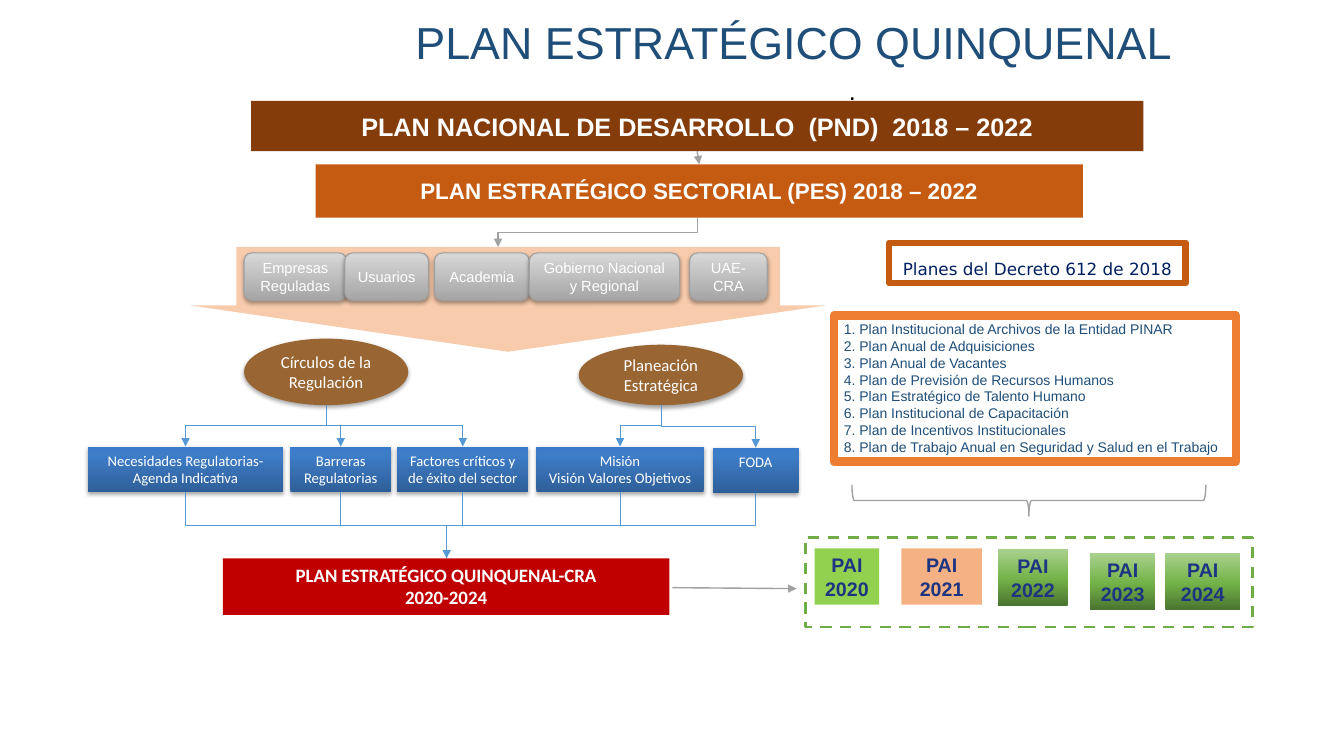
"""Build the slide of the five-year strategic plan and the plans that feed it."""
from lxml.etree import SubElement as Sub
from pptx import Presentation
from pptx.dml.color import RGBColor
from pptx.enum.dml import MSO_LINE as Dash
from pptx.enum.shapes import MSO_CONNECTOR as Cxn, MSO_SHAPE as Kind
from pptx.enum.text import MSO_ANCHOR as Anchor, MSO_AUTO_SIZE as Fit, PP_ALIGN as Align
from pptx.oxml.ns import qn
from pptx.util import Inches, Pt

CELL = Inches(0.1)
hue = RGBColor.from_string
GRAY, SKY, WHITE = "A1A1A1", "5698D3", "FFFFFF"
STEEL = ((0, "A5A5A5"), (100, "D8D8D8"))
BLUE = ((0, "2F5F99"), (80, "3D7CC7"), (100, "3A7CCB"))
GREEN = ((0, "4B7430"), (48, "74B349"), (100, "A9D18E"))


def put(shape, text="", fill=None, line=None, thick=1, size=12, font="Arial", ink=WHITE,
        bold=False, align=Align.CENTER, anchor=Anchor.MIDDLE, shade=False):
    """Paint a shape and write its text, one paragraph per line."""
    shape.shadow.inherit = False
    if fill is None:
        shape.fill.background()
    elif isinstance(fill, str):
        shape.fill.solid()
        shape.fill.fore_color.rgb = hue(fill)
    else:
        shape.fill.gradient()
        shape.fill.gradient_angle = 90
        stops = shape._element.spPr.find(".//" + qn("a:gsLst"))
        stops.clear()
        for pos, tone in fill:
            stop = Sub(stops, qn("a:gs"), pos=str(pos * 1000))
            Sub(stop, qn("a:srgbClr"), val=tone)
    if line:
        shape.line.color.rgb = hue(line)
        shape.line.width = Pt(thick)
    else:
        shape.line.fill.background()
    if shade:
        glow = shape._element.spPr.find(qn("a:effectLst"))
        drop = Sub(glow, qn("a:outerShdw"), blurRad=str(Pt(3.1)), dist=str(Pt(1.8)),
                   dir="5400000", rotWithShape="0")
        tone = Sub(drop, qn("a:srgbClr"), val="000000")
        Sub(tone, qn("a:alpha"), val="35000")
    if text:
        frame = shape.text_frame
        frame.text = text
        frame.word_wrap = True
        frame.auto_size = Fit.NONE
        frame.vertical_anchor = anchor
        for para in frame.paragraphs:
            props = para._p.get_or_add_pPr()
            props.set("marL", "0")
            props.set("indent", "0")
            Sub(props, qn("a:buNone"))
            para.alignment = align
            para.space_before = Pt(0)
            para.font.size = Pt(size)
            para.font.name = font
            para.font.bold = bold
            para.font.color.rgb = hue(ink)
    return shape


def wire(x1, y1, x2, y2, tone, thick=1, head=True, bent=True):
    """Draw a line; a bent one leaves and arrives vertically."""
    ends = [round(n * CELL) for n in (x1, y1, x2, y2)]
    link = shapes.add_connector(Cxn.ELBOW if bent else Cxn.STRAIGHT, *ends)
    if bent:
        wide, high = abs(ends[2] - ends[0]), ends[3] - ends[1]
        link.left = (ends[0] + ends[2] - high) // 2
        link.top = (ends[1] + ends[3] - wide) // 2
        link.width, link.height = high, wide
        frame = link._element.spPr.find(qn("a:xfrm"))
        frame.attrib.pop("flipH", None)
        frame.set("rot", "5400000" if x2 < x1 else "16200000")
        if x2 >= x1:
            frame.set("flipH", "1")
    link.line.color.rgb = hue(tone)
    link.line.width = Pt(thick)
    if head:
        Sub(link.line._get_or_add_ln(), qn("a:tailEnd"), type="triangle")
    Sub(link._element.spPr, qn("a:effectLst"))
    return link


deck = Presentation()
deck.slide_width, deck.slide_height = Inches(13.33), Inches(7.5)
slide = deck.slides.add_slide(deck.slide_layouts[1])
shapes = slide.shapes
title, plans = slide.placeholders
for hold, spot in ((title, (34.5, -1, 88.5, 10.3)), (plans, (82.7, 31.3, 39.9, 14.5))):
    hold.left, hold.top, hold.width, hold.height = [round(n * CELL) for n in spot]
put(title, "PLAN ESTRATÉGICO QUINQUENAL", size=32, ink="1F4E79")
names = ("Plan Institucional de Archivos de la Entidad PINAR", "Plan Anual de Adquisiciones",
         "Plan Anual de Vacantes", "Plan de Previsión de Recursos Humanos",
         "Plan Estratégico de Talento Humano", "Plan Institucional de Capacitación",
         "Plan de Incentivos Institucionales",
         "Plan de Trabajo Anual en Seguridad y Salud en el Trabajo")
put(plans, "\n".join(f"{n}. {name}" for n, name in enumerate(names, 1)), fill=WHITE,
    line="ED7D31", thick=6, size=10, ink="1F4E79", align=Align.LEFT, anchor=Anchor.TOP)

dot = shapes.add_textbox(83.2 * CELL, 7 * CELL, 29.9 * CELL, 4 * CELL)
put(dot, ".", size=18, ink="000000", align=Align.JUSTIFY, anchor=Anchor.TOP)

calm = dict(size=10.5, fill=STEEL, line=GRAY, thick=0.75, shade=True)
oval = dict(size=12, font="Calibri", fill="996633", shade=True)
goal = dict(size=10.5, font="Calibri", fill=BLUE, shade=True, anchor=Anchor.TOP)
year = dict(size=14, ink="1C3481", bold=True)
made = {}
for key, kind, spot, text, style in (
        ("pnd", Kind.RECTANGLE, (24.9, 10, 88.5, 5),
         "PLAN NACIONAL DE DESARROLLO  (PND)  2018 – 2022",
         dict(size=18, bold=True, fill="843C0B")),
        ("pes", Kind.RECTANGLE, (31.3, 16.3, 76.1, 5.3),
         "PLAN ESTRATÉGICO SECTORIAL (PES) 2018 – 2022",
         dict(size=16, bold=True, fill="C55A11")),
        ("law", Kind.RECTANGLE, (88.2, 24.1, 29.4, 4), "Planes del Decreto 612 de 2018",
         dict(font="DejaVu Sans", ink="002060", fill=WHITE, line="C55A11", thick=4.5,
              anchor=Anchor.TOP)),
        ("funnel", Kind.DOWN_ARROW, (18.8, 24.5, 63.2, 10.4), "", dict(fill="F8CBAD")),
        ("firms", Kind.ROUNDED_RECTANGLE, (24.2, 25.1, 10.2, 4.7), "Empresas Reguladas", calm),
        ("users", Kind.ROUNDED_RECTANGLE, (34.2, 25.1, 8.3, 4.7), "Usuarios", calm),
        ("school", Kind.ROUNDED_RECTANGLE, (43.1, 25.1, 9.4, 4.7), "Academia", calm),
        ("cra", Kind.ROUNDED_RECTANGLE, (68.4, 25.1, 7.7, 4.7), "UAE-CRA", calm),
        ("state", Kind.ROUNDED_RECTANGLE, (52.5, 25.1, 14.9, 4.7),
         "Gobierno Nacional y Regional", calm),
        ("rings", Kind.OVAL, (24.2, 33.6, 16.3, 6.6), "Círculos de la Regulación", oval),
        ("plan", Kind.OVAL, (57.4, 34.2, 16.3, 6), "Planeación Estratégica", oval),
        ("needs", Kind.RECTANGLE, (8.7, 44.3, 19.4, 4.5),
         "Necesidades Regulatorias-Agenda Indicativa", goal),
        ("bars", Kind.RECTANGLE, (28.8, 44.3, 10, 4.5), "Barreras Regulatorias", goal),
        ("keys", Kind.RECTANGLE, (39.4, 44.3, 13, 4.5),
         "Factores críticos y de éxito del sector", goal),
        ("aims", Kind.RECTANGLE, (53.2, 44.3, 16.6, 4.5),
         "Misión\nVisión Valores Objetivos", goal),
        ("foda", Kind.RECTANGLE, (70.7, 44.4, 8.5, 4.5), "FODA", goal),
        ("core", Kind.RECTANGLE, (22.1, 55.4, 44.3, 5.6),
         "PLAN ESTRATÉGICO QUINQUENAL-CRA\n2020-2024",
         dict(size=13.5, font="Calibri", bold=True, fill="C00000", anchor=Anchor.TOP)),
        ("2020", Kind.RECTANGLE, (80.8, 54.4, 6.4, 5.6), "PAI 2020", year | dict(fill="92D050")),
        ("2021", Kind.RECTANGLE, (89.4, 54.4, 8, 5.6), "PAI 2021", year | dict(fill="F4B183")),
        ("2022", Kind.RECTANGLE, (99, 54.5, 6.9, 5.6), "PAI 2022", year | dict(fill=GREEN)),
        ("2023", Kind.RECTANGLE, (108.1, 54.9, 6.5, 5.6), "PAI 2023", year | dict(fill=GREEN)),
        ("2024", Kind.RECTANGLE, (115.6, 54.9, 7.4, 5.6), "PAI 2024", year | dict(fill=GREEN)),
        ("years", Kind.RECTANGLE, (79.9, 53.3, 44.3, 8.9), "", dict(line="70AD47", thick=2)),
        ("brace", Kind.LEFT_BRACE, (100.5, 32.1, 3.1, 35.1), "", dict(line=GRAY))):
    shape = shapes.add_shape(kind, *[round(n * CELL) for n in spot])
    made[key] = put(shape, text, **style)

law = made["law"].text_frame
law.margin_left = law.margin_right = law.margin_bottom = 0
law.margin_top = Inches(0.16)
made["funnel"].adjustments[0] = 0.853
made["funnel"].adjustments[1] = 0.443
made["years"].line.dash_style = Dash.DASH
made["brace"].rotation = 270

drop = wire(69.2, 15, 69.2, 16.3, GRAY, bent=False)
drop.begin_connect(made["pnd"], 2)
drop.end_connect(made["pes"], 0)
wire(66.7, 58.3, 79, 58.4, GRAY, bent=False)
wire(69.2, 21.6, 49.4, 24.5, GRAY)
for key, start in (("needs", 32.4), ("bars", 32.4), ("keys", 32.4), ("aims", 65.6), ("foda", 65.6)):
    box = made[key]
    mid, top, foot = [n / CELL for n in (box.left + box.width / 2, box.top, box.top + box.height)]
    wire(start, 40.2, mid, top, SKY, thick=0.75)
    wire(mid, foot, 44.3, 55.4, SKY, thick=0.75, head=key == "foda")

deck.save("out.pptx")
